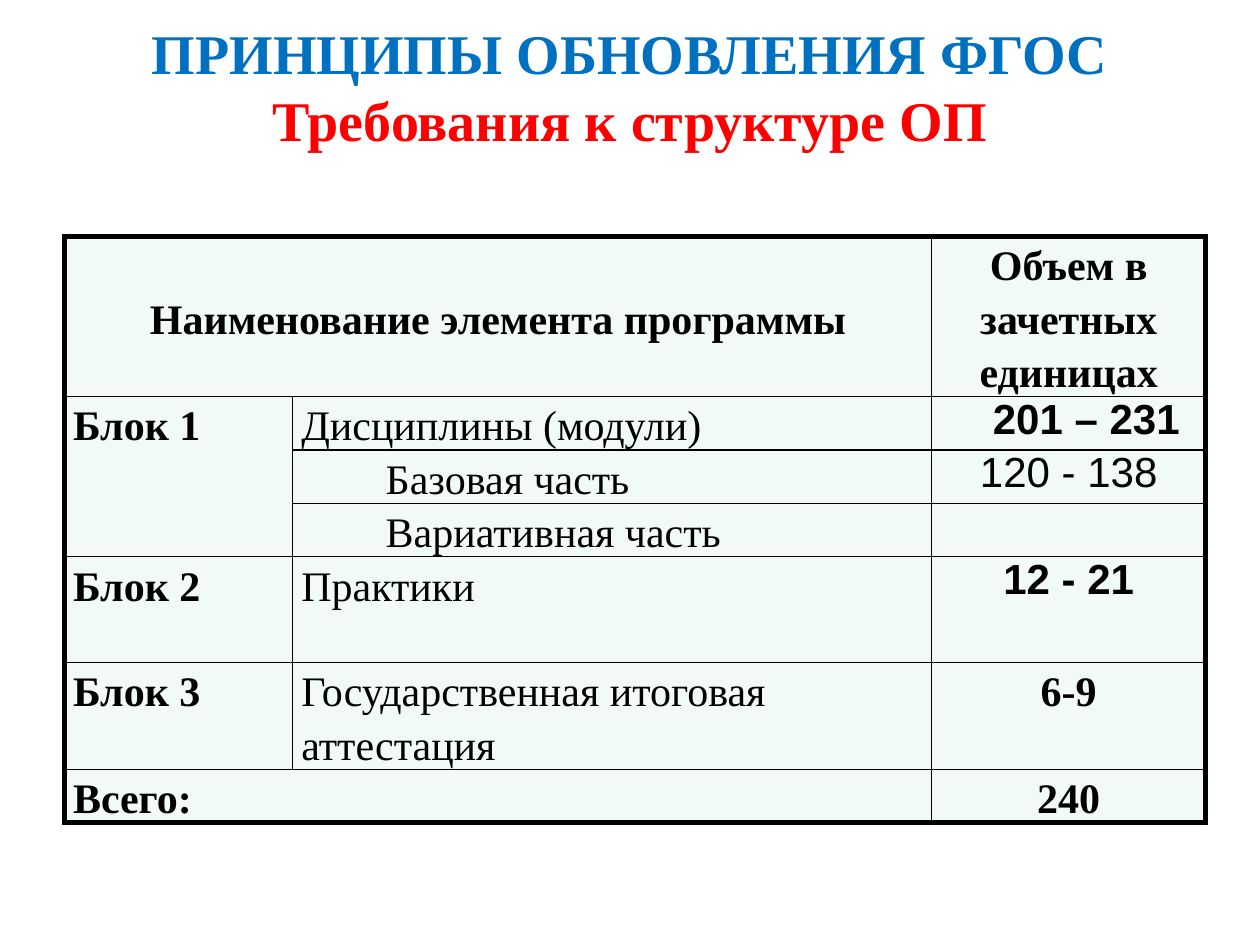
from dataclasses import dataclass

from lxml import etree
from pptx import Presentation
from pptx.dml.color import RGBColor
from pptx.enum.text import MSO_ANCHOR, MSO_AUTO_SIZE, PP_ALIGN
from pptx.oxml.ns import qn
from pptx.util import Inches, Pt

LEFT, CENTER, JUSTIFY = PP_ALIGN.LEFT, PP_ALIGN.CENTER, PP_ALIGN.JUSTIFY
TOP, MIDDLE = MSO_ANCHOR.TOP, MSO_ANCHOR.MIDDLE
NO_FIT = MSO_AUTO_SIZE.NONE
COLORS = {"blue": "0070C0", "red": "FF0000", "ink": "000000", "cell": "F1F9F9"}
SERIF, SANS = "Times New Roman", "Arial"

WIDTH, HEIGHT = Inches(10), Inches(7.5)
TABLE_LEFT, TABLE_TOP, TABLE_WIDTH = 0.051, 0.25, 0.906
COLUMN_SHARES = (0.2, 0.56, 0.24)
ROW_UNITS = (3, 1, 1, 1, 2, 2, 1)
UNIT = Inches(0.42)
THICK, THIN = Pt(3), Pt(1)


@dataclass
class Entry:
    row: int
    column: int
    text: str
    bold: bool = True
    align: PP_ALIGN = CENTER
    font: str = SERIF
    spacing: float = 1.15
    anchor: MSO_ANCHOR = TOP
    rows: int = 1
    columns: int = 1
    indent: float = 0


ENTRIES = (
    Entry(0, 0, "Наименование элемента программы", anchor=MIDDLE, columns=2),
    Entry(0, 2, "Объем в зачетных единицах", anchor=MIDDLE),
    Entry(1, 0, "Блок 1", align=JUSTIFY, rows=3),
    Entry(1, 1, "Дисциплины (модули)", False, LEFT),
    Entry(1, 2, "201 – 231", font=SANS, spacing=1, indent=0.28),
    Entry(2, 1, "Базовая часть", False, LEFT, indent=0.67),
    Entry(2, 2, "120 - 138", False, font=SANS, spacing=1),
    Entry(3, 1, "Вариативная часть", False, LEFT, indent=0.67),
    Entry(4, 0, "Блок 2", align=JUSTIFY),
    Entry(4, 1, "Практики", False, LEFT),
    Entry(4, 2, "12 - 21", font=SANS, spacing=1),
    Entry(5, 0, "Блок 3", align=JUSTIFY),
    Entry(5, 1, "Государственная итоговая аттестация", False, LEFT),
    Entry(5, 2, "6-9"),
    Entry(6, 0, "Всего:", align=LEFT, columns=2),
    Entry(6, 2, "240"),
)


def assign(target: object, values: dict) -> None:
    for name, value in values.items():
        setattr(target, name, value)


def add_span(para, text: str, size: int, font: str, color: str, bold: bool) -> None:
    span = para.add_run()
    span.text = text
    assign(span.font, {"size": Pt(size), "name": font, "bold": bold})
    span.font.color.rgb = RGBColor.from_string(COLORS[color])


def draw_title(page) -> None:
    title = page.shapes.title
    assign(title, {"left": int(WIDTH * 0.05), "top": int(HEIGHT * 0.04),
                   "width": int(WIDTH * 0.9), "height": Inches(1.25)})
    frame = title.text_frame
    assign(frame, {"auto_size": NO_FIT, "word_wrap": True, "vertical_anchor": MIDDLE,
                   "margin_bottom": Inches(0.54)})
    para = frame.paragraphs[0]
    para.alignment = CENTER
    add_span(para, "ПРИНЦИПЫ ОБНОВЛЕНИЯ ФГОС", 32, SERIF, "blue", True)
    para.add_line_break()
    add_span(para, "Требования к структуре ОП", 32, SERIF, "red", True)


def draw_borders(cell, widths: dict) -> None:
    properties = cell._tc.get_or_add_tcPr()
    for position, (side, width) in enumerate(widths.items()):
        line = etree.Element(qn(f"a:ln{side}"), w=str(width))
        fill = etree.SubElement(line, qn("a:solidFill"))
        etree.SubElement(fill, qn("a:srgbClr"), val=COLORS["ink"])
        properties.insert(position, line)


def style_cell(cell, row: int, column: int) -> None:
    assign(cell, {"margin_left": Inches(0.07), "margin_right": Inches(0.07),
                  "margin_top": 0, "margin_bottom": 0})
    cell.fill.solid()
    cell.fill.fore_color.rgb = RGBColor.from_string(COLORS["cell"])
    last_row, last_column = len(ROW_UNITS) - 1, len(COLUMN_SHARES) - 1
    outer = {"L": column == 0, "R": column == last_column,
             "T": row == 0, "B": row == last_row}
    draw_borders(cell, {side: THICK if edge else THIN for side, edge in outer.items()})


def fill_entry(table, entry: Entry) -> None:
    cell = table.cell(entry.row, entry.column)
    if entry.rows > 1 or entry.columns > 1:
        cell.merge(table.cell(entry.row + entry.rows - 1,
                              entry.column + entry.columns - 1))
    cell.vertical_anchor = entry.anchor
    para = cell.text_frame.paragraphs[0]
    assign(para, {"alignment": entry.align, "line_spacing": entry.spacing})
    if entry.indent:
        para._p.get_or_add_pPr().set("marL", str(Inches(entry.indent)))
    add_span(para, entry.text, 24, entry.font, "ink", entry.bold)


def draw_table(page) -> None:
    width = int(WIDTH * TABLE_WIDTH)
    frame = page.shapes.add_table(
        len(ROW_UNITS), len(COLUMN_SHARES), int(WIDTH * TABLE_LEFT),
        int(HEIGHT * TABLE_TOP), width, UNIT * sum(ROW_UNITS))
    table = frame.table
    assign(table, {"first_row": False, "horz_banding": False})
    for column, share in zip(table.columns, COLUMN_SHARES):
        column.width = int(width * share)
    for row, units in zip(table.rows, ROW_UNITS):
        row.height = UNIT * units
    for row in range(len(ROW_UNITS)):
        for column in range(len(COLUMN_SHARES)):
            style_cell(table.cell(row, column), row, column)
    for entry in ENTRIES:
        fill_entry(table, entry)


def main() -> None:
    deck = Presentation()
    assign(deck, {"slide_width": WIDTH, "slide_height": HEIGHT})
    page = deck.slides.add_slide(deck.slide_layouts[5])
    draw_title(page)
    draw_table(page)
    deck.save("out.pptx")


if __name__ == "__main__":
    main()
